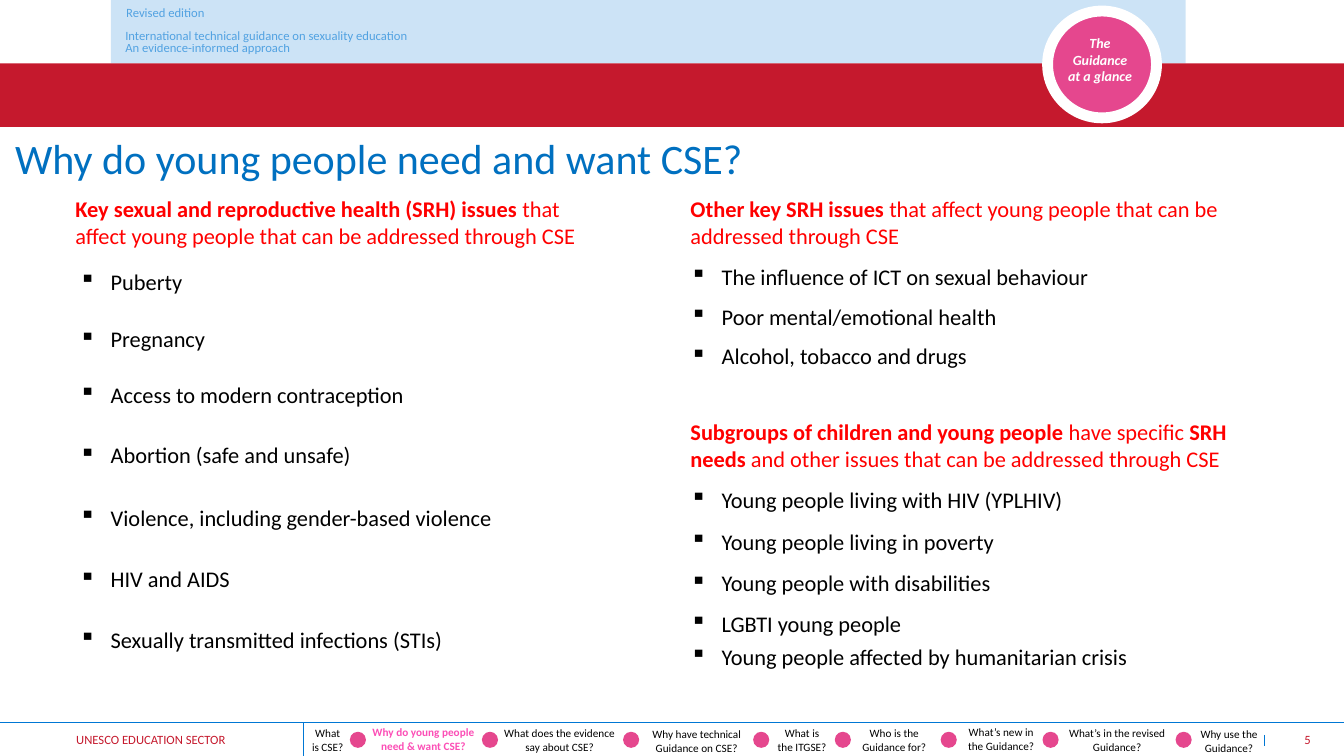
from lxml.etree import SubElement
from pptx import Presentation
from pptx.dml.color import RGBColor
from pptx.enum.shapes import MSO_CONNECTOR, MSO_SHAPE
from pptx.enum.text import MSO_ANCHOR, PP_ALIGN
from pptx.oxml.ns import qn
from pptx.util import Inches, Pt

BLUE, RED, PINK, WHITE, BLACK = "0077D4", "C5192D", "E5478E", "FFFFFF", "000000"
HEADING_RED, TITLE_BLUE, CURRENT_PINK = "FF0000", "0070C0", "FC4EB6"

SRH_ISSUES = [
    (2.61, "Puberty"),
    (3.18, "Pregnancy"),
    (3.73, "Access to modern contraception"),
    (4.33, "Abortion (safe and unsafe)"),
    (4.95, "Violence, including gender-based violence"),
    (5.56, "HIV and AIDS"),
    (6.16, "Sexually transmitted infections (STIs)"),
]
OTHER_ISSUES = [
    (2.56, "The influence of ICT on sexual behaviour"),
    (2.96, "Poor mental/emotional health"),
    (3.35, "Alcohol, tobacco and drugs"),
]
SUBGROUPS = [
    (4.77, "Young people living with HIV (YPLHIV)"),
    (5.19, "Young people living in poverty"),
    (5.6, "Young people with disabilities"),
    (6, "LGBTI young people"),
    (6.33, "Young people affected by humanitarian crisis"),
]
HEADINGS = [
    (0.65, 1.89, 5.26, [("Key sexual and reproductive health (SRH) issues ", True),
                        ("that affect young people that can be addressed through CSE", False)]),
    (6.75, 1.89, 5.48, [("Other key SRH issues ", True),
                        ("that affect young people that can be addressed through CSE", False)]),
    (6.75, 4.1, 5.66, [("Subgroups of children and young people ", True),
                       ("have specific ", False), ("SRH needs ", True),
                       ("and other issues that can be addressed through CSE", False)]),
]
EDITION_LINES = [
    (1.21, 0.02, 0.86, 0.21, "Revised edition"),
    (1.04, 0.2, 3.2, 0.3, "International technical guidance on sexuality education"),
    (1.13, 0.4, 1.86, 0.15, "An evidence-informed approach"),
]
CURRENT_SECTION = "Why do young people need & want CSE?"
SECTIONS = [
    (2.99, 7.16, 0.52, "What is CSE?"),
    (3.58, 7.15, 1.24, CURRENT_SECTION),
    (4.84, 7.16, 1.42, "What does the evidence say about CSE?"),
    (6.2, 7.17, 1.42, "Why have technical Guidance on CSE?"),
    (7.6, 7.16, 0.71, "What is the ITGSE?"),
    (8.43, 7.16, 0.88, "Who is the Guidance for?"),
    (9.49, 7.15, 0.88, "What’s new in the Guidance?"),
    (10.37, 7.16, 1.42, "What’s in the revised Guidance?"),
    (11.75, 7.17, 0.88, "Why use the Guidance?"),
]
SEPARATORS = [3.47, 4.78, 6.18, 7.47, 8.28, 9.33, 10.34, 11.66]


def color(hex_code):
    """Turn a hex string into a colour."""
    return RGBColor.from_string(hex_code)


def fade(element, opacity):
    """Give every colour inside an element an opacity in percent."""
    for rgb in element.iter(qn("a:srgbClr")):
        SubElement(rgb, qn("a:alpha"), val=str(opacity * 1000))


def add_block(slide, preset, left, top, width, height, fill, border=0):
    """Add a filled preset shape, with a white border if one is given."""
    block = slide.shapes.add_shape(
        preset, Inches(left), Inches(top), Inches(width), Inches(height))
    block.shadow.inherit = False
    block.fill.solid()
    block.fill.fore_color.rgb = color(fill)
    if border:
        block.line.color.rgb = color(WHITE)
        block.line.width = Pt(border)
    else:
        block.line.fill.background()
    return block


def add_rule(slide, x1, y1, x2, y2, weight=0.5):
    """Add a thin blue line."""
    rule = slide.shapes.add_connector(
        MSO_CONNECTOR.STRAIGHT, Inches(x1), Inches(y1), Inches(x2), Inches(y2))
    rule.line.color.rgb = color(BLUE)
    rule.line.width = Pt(weight)
    SubElement(rule._element.spPr, qn("a:effectLst"))


def add_text(slide, left, top, width, height, runs, size, ink, align=PP_ALIGN.LEFT,
             tight=False, bold=None, italic=None, bullet=None):
    """Add a one-paragraph text box and return its paragraph."""
    box = slide.shapes.add_textbox(
        Inches(left), Inches(top), Inches(width), Inches(height))
    frame = box.text_frame
    frame.word_wrap = True
    if tight:
        frame.margin_left = frame.margin_right = 0
        frame.margin_top = frame.margin_bottom = 0
        frame.vertical_anchor = MSO_ANCHOR.MIDDLE
    paragraph = frame.paragraphs[0]
    paragraph.alignment = align
    if bullet:
        properties = paragraph._p.get_or_add_pPr()
        properties.set("marL", str(Inches(0.31)))
        properties.set("indent", str(-Inches(0.31)))
        SubElement(properties, qn("a:buChar"), char=bullet)
    font = paragraph.font
    font.name, font.size = "Calibri", Pt(size)
    font.bold, font.italic = bold, italic
    font.color.rgb = color(ink)
    for words, strong in runs:
        run = paragraph.add_run()
        run.text = words
        if strong is not None:
            run.font.bold = strong
    return paragraph


def add_label(slide, left, top, width, height, words, size, ink, **style):
    """Add centred text in a single style."""
    style.setdefault("align", PP_ALIGN.CENTER)
    return add_text(slide, left, top, width, height, [(words, None)], size, ink, **style)


def add_bullets(slide, left, width, items):
    """Add a column of bulleted statements."""
    for top, words in items:
        add_label(slide, left, top, width, 0.37, words, 16, BLACK,
                  align=PP_ALIGN.LEFT, bullet="▪")


def add_banner(slide):
    """Add the header bands, edition lines and round badge."""
    band = add_block(slide, MSO_SHAPE.RECTANGLE, 1.1, 0, 10.66, 0.63, BLUE)
    fade(band._element.spPr, 20)
    add_block(slide, MSO_SHAPE.RECTANGLE, 0, 0.63, 13.33, 0.63, RED)
    for left, top, width, height, words in EDITION_LINES:
        line = add_label(slide, left, top, width, height, words, 9, BLUE, tight=True)
        fade(line._p, 60)
    add_block(slide, MSO_SHAPE.FLOWCHART_CONNECTOR, 10.39, 0.11, 1.08, 1.06, PINK, 7.75)
    add_label(slide, 10.49, 0.29, 0.84, 0.61, "The Guidance at a glance", 10, WHITE,
              bold=True, italic=True)


def add_footer(slide):
    """Add the footer with its section trail and page number."""
    add_rule(slide, 0, 7.17, 13.33, 7.17)
    add_rule(slide, 3.01, 7.17, 3.01, 7.5)
    add_rule(slide, 12.54, 7.29, 12.54, 7.4, 1)
    add_label(slide, 0, 7.17, 2.99, 0.33, "UNESCO EDUCATION SECTOR", 9, RED, tight=True)
    add_label(slide, 12.69, 7.17, 0.31, 0.33, "5", 9, RED, tight=True,
              align=PP_ALIGN.RIGHT)
    for left in SEPARATORS:
        add_block(slide, MSO_SHAPE.FLOWCHART_CONNECTOR, left, 7.26, 0.16, 0.16, PINK)
    for left, top, width, words in SECTIONS:
        current = words == CURRENT_SECTION
        add_label(slide, left, top, width, 0.37, words, 8,
                  CURRENT_PINK if current else BLACK, bold=current)


def main():
    """Build and save the slide."""
    deck = Presentation()
    deck.slide_width, deck.slide_height = Inches(13.33), Inches(7.5)
    slide = deck.slides.add_slide(deck.slide_layouts[6])
    add_banner(slide)
    add_label(slide, 0, 1.27, 7.52, 0.59, "Why do young people need and want CSE?",
              30, TITLE_BLUE, tight=True)
    for left, top, width, runs in HEADINGS:
        add_text(slide, left, top, width, 0.64, runs, 16, HEADING_RED)
    add_bullets(slide, 0.69, 4.76, SRH_ISSUES)
    add_bullets(slide, 6.75, 5.88, OTHER_ISSUES + SUBGROUPS)
    add_footer(slide)
    deck.save("out.pptx")


if __name__ == "__main__":
    main()
